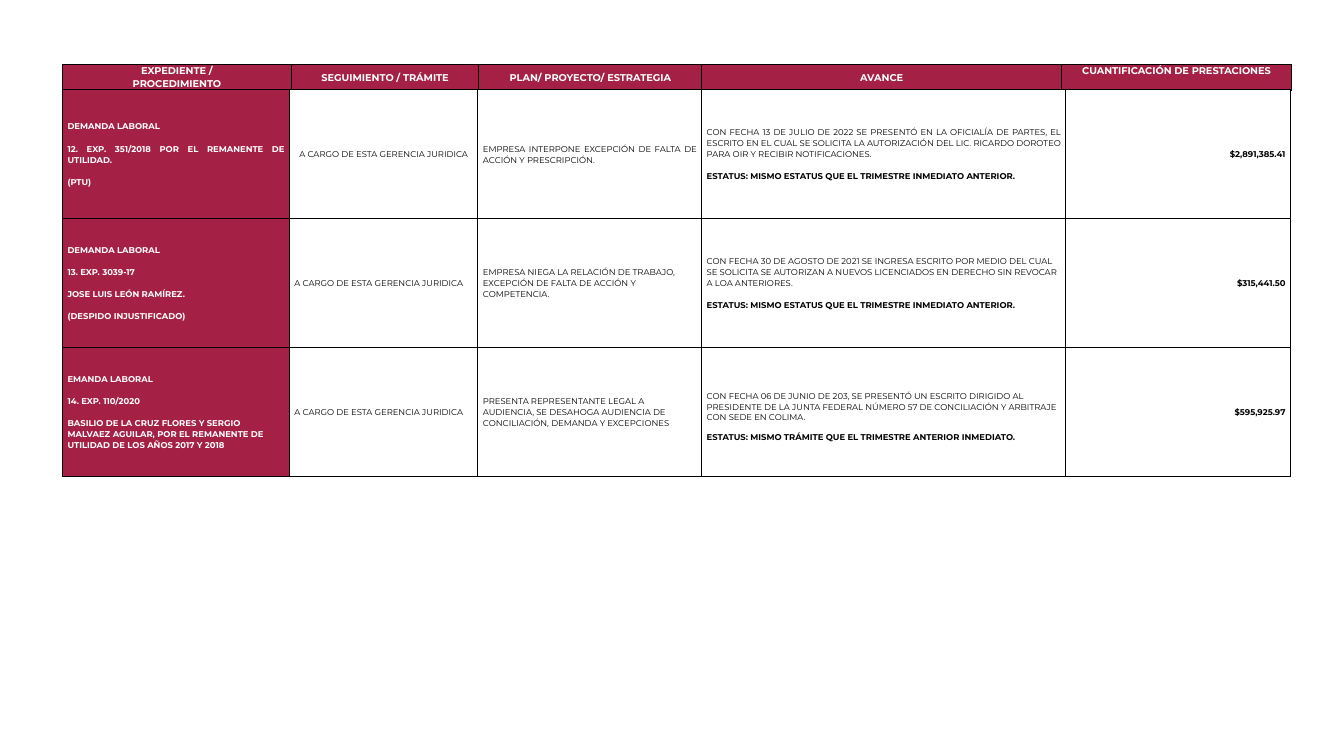
"""Build the slide of labour claims with their header and three case tables."""
from lxml.etree import SubElement
from pptx import Presentation
from pptx.dml.color import RGBColor
from pptx.enum.text import MSO_ANCHOR, PP_ALIGN
from pptx.oxml.ns import qn
from pptx.util import Inches, Pt

WINE = RGBColor(0xA4, 0x21, 0x45)
WHITE = RGBColor(0xFF, 0xFF, 0xFF)
BLACK = RGBColor(0, 0, 0)
FACE = "Montserrat"
LEFT, TOP = 0.62, 0.64
HEAD_HIGH, CASE_HIGH = 0.25, 1.28
HEAD_COLS = (2.27, 1.86, 2.21, 3.57, 2.28)
CASE_COLS = (2.25, 1.87, 2.22, 3.61, 2.23)
ALIGN = {"l": PP_ALIGN.LEFT, "c": PP_ALIGN.CENTER, "r": PP_ALIGN.RIGHT, "j": PP_ALIGN.JUSTIFY}

HEADS = [
    ["EXPEDIENTE /", "PROCEDIMIENTO"],
    ["SEGUIMIENTO / TRÁMITE"],
    ["PLAN/ PROYECTO/ ESTRATEGIA"],
    ["AVANCE"],
    ["CUANTIFICACIÓN DE PRESTACIONES"],
]
DUTY = ["A CARGO DE ESTA GERENCIA JURIDICA"]
CASES = [
    ("jcjjr", [
        ["DEMANDA LABORAL", "12. EXP. 351/2018 POR EL REMANENTE DE UTILIDAD.", "(PTU)"],
        DUTY,
        ["EMPRESA INTERPONE EXCEPCIÓN DE FALTA DE ACCIÓN Y PRESCRIPCIÓN."],
        ["CON FECHA 13 DE JULIO DE 2022 SE PRESENTÓ EN LA OFICIALÍA DE PARTES, EL ESCRITO EN EL CUAL "
         "SE SOLICITA LA AUTORIZACIÓN DEL LIC. RICARDO DOROTEO PARA OIR Y RECIBIR NOTIFICACIONES.",
         "ESTATUS: MISMO ESTATUS QUE EL TRIMESTRE INMEDIATO ANTERIOR."],
        ["$2,891,385.41"],
    ]),
    ("llllr", [
        ["DEMANDA LABORAL", "13. EXP. 3039-17", "JOSE LUIS LEÓN RAMÍREZ.", "(DESPIDO INJUSTIFICADO)"],
        DUTY,
        ["EMPRESA NIEGA LA RELACIÓN DE TRABAJO, EXCEPCIÓN DE FALTA DE ACCIÓN Y COMPETENCIA."],
        ["CON FECHA 30 DE AGOSTO DE 2021 SE INGRESA ESCRITO POR MEDIO DEL CUAL SE SOLICITA SE "
         "AUTORIZAN A NUEVOS LICENCIADOS EN DERECHO SIN REVOCAR A LOA ANTERIORES.",
         "ESTATUS: MISMO ESTATUS QUE EL TRIMESTRE INMEDIATO ANTERIOR."],
        ["$315,441.50"],
    ]),
    ("llllr", [
        ["EMANDA LABORAL", "14. EXP. 110/2020",
         "BASILIO DE LA CRUZ FLORES Y SERGIO MALVAEZ AGUILAR, POR EL REMANENTE DE UTILIDAD "
         "DE LOS AÑOS 2017 Y 2018"],
        DUTY,
        ["PRESENTA REPRESENTANTE LEGAL A AUDIENCIA, SE DESAHOGA AUDIENCIA DE CONCILIACIÓN, "
         "DEMANDA Y EXCEPCIONES"],
        ["CON FECHA 06 DE JUNIO DE 203, SE PRESENTÓ UN ESCRITO DIRIGIDO AL PRESIDENTE DE LA JUNTA "
         "FEDERAL NÚMERO 57 DE CONCILIACIÓN Y ARBITRAJE CON SEDE EN COLIMA.",
         "ESTATUS: MISMO TRÁMITE QUE EL TRIMESTRE ANTERIOR INMEDIATO."],
        ["$595,925.97"],
    ]),
]


def style(item, form):
    for key, val in form.items():
        setattr(item, key, val)


def frame(cell):
    props = cell._tc.get_or_add_tcPr()
    for side in ("lnL", "lnR", "lnT", "lnB"):
        line = SubElement(props, qn("a:" + side), w=str(Pt(1)))
        fill = SubElement(line, qn("a:solidFill"))
        SubElement(fill, qn("a:srgbClr"), val=str(BLACK))


def write(cell, lines, fill, align, size, bold, color, inset, gap, space, drop=0):
    frame(cell)
    cell.fill.solid()
    cell.fill.fore_color.rgb = fill
    style(cell, {"margin_left": Inches(inset), "margin_right": Inches(inset),
                 "margin_top": Inches(drop), "margin_bottom": 0,
                 "vertical_anchor": MSO_ANCHOR.MIDDLE})
    for num, line in enumerate(lines):
        para = cell.text_frame.paragraphs[0] if num == 0 else cell.text_frame.add_paragraph()
        style(para, {"alignment": ALIGN[align], "line_spacing": space})
        if num and gap:
            para.space_before = Pt(gap)
        run = para.add_run()
        run.text = line
        style(run.font, {"name": FACE, "size": Pt(size), "bold": bold or line.startswith("ESTATUS")})
        run.font.color.rgb = color


def grid(slide, top, high, cols):
    table = slide.shapes.add_table(1, len(cols), Inches(LEFT), Inches(top),
                                   Inches(sum(cols)), Inches(high)).table
    style(table, {"first_row": False, "horz_banding": False})
    table.rows[0].height = Inches(high)
    for col, wide in zip(table.columns, cols):
        col.width = Inches(wide)
    return table.rows[0].cells


def main():
    deck = Presentation()
    style(deck, {"slide_width": Inches(13.33), "slide_height": Inches(7.5)})
    slide = deck.slides.add_slide(deck.slide_layouts[6])

    cells = list(grid(slide, TOP, HEAD_HIGH, HEAD_COLS))
    for cell, lines in zip(cells, HEADS):
        write(cell, lines, WINE, "c", 7, True, WHITE, 0.02, 0, 1.07)
    cells[-1].vertical_anchor = MSO_ANCHOR.TOP

    for row, (aligns, texts) in enumerate(CASES):
        top = TOP + HEAD_HIGH + row * CASE_HIGH
        cells = grid(slide, top, CASE_HIGH, CASE_COLS)
        for col, (cell, lines) in enumerate(zip(cells, texts)):
            first, price = col == 0, col == 4
            low = row == 2 and col == 3
            write(cell, lines, WINE if first else WHITE, aligns[col], 6, first or price,
                  WHITE if first else BLACK, 0.05, 7.3 if low else 8,
                  1.0 if low or price else 1.07, 0.1 if low else 0)

    deck.save("out.pptx")


if __name__ == "__main__":
    main()
